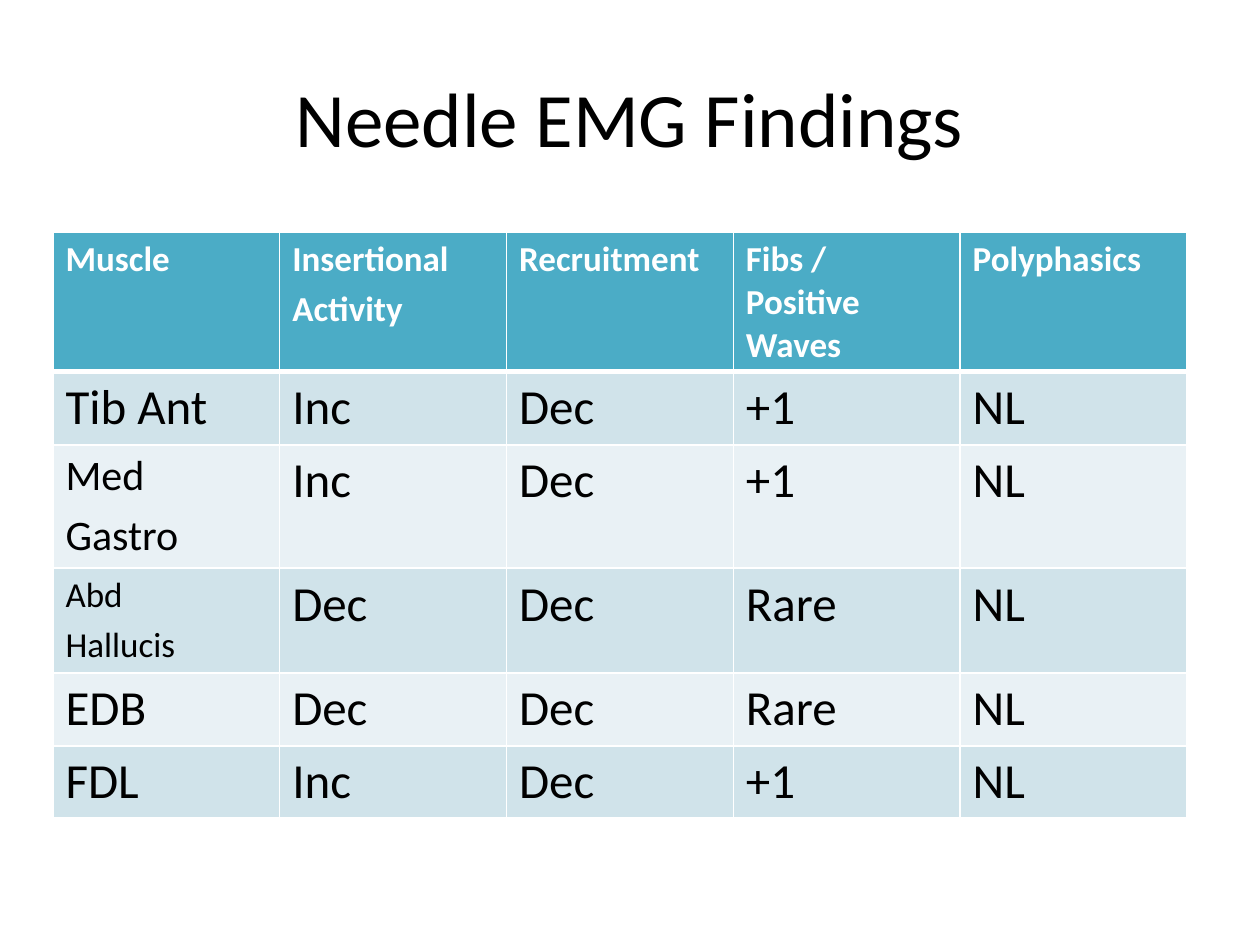
from lxml import etree
from pptx import Presentation
from pptx.dml.color import RGBColor
from pptx.enum.text import MSO_ANCHOR, PP_ALIGN
from pptx.oxml.ns import qn
from pptx.util import Inches, Pt

CENTER, LEFT = PP_ALIGN.CENTER, PP_ALIGN.LEFT
MIDDLE, TOP = MSO_ANCHOR.MIDDLE, MSO_ANCHOR.TOP
FONT = "Calibri"
COLORS = {
    "text": "000000",
    "header_text": "FFFFFF",
    "header": "4BACC6",
    "odd_row": "D0E3EA",
    "even_row": "E9F1F5",
    "border": "FFFFFF",
}

HEADERS = ["Muscle", "Insertional\nActivity", "Recruitment",
           "Fibs / Positive Waves", "Polyphasics"]
FINDINGS = [
    ["Tib Ant", "Inc", "Dec", "+1", "NL"],
    ["Med\nGastro", "Inc", "Dec", "+1", "NL"],
    ["Abd\nHallucis", "Dec", "Dec", "Rare", "NL"],
    ["EDB", "Dec", "Dec", "Rare", "NL"],
    ["FDL", "Inc", "Dec", "+1", "NL"],
]
ROW_HEIGHTS = [1.11, 0.58, 0.98, 0.83, 0.58, 0.57]
BODY_SIZE = 28
SMALLER_SIZES = {"Med\nGastro": 24, "Abd\nHallucis": 20}


def write_text(frame, text, size, color="text", bold=False, align=LEFT):
    """Write one paragraph per line, spaced by a fifth of the text size."""
    frame.word_wrap = True
    for index, line in enumerate(text.split("\n")):
        paragraph = frame.add_paragraph() if index else frame.paragraphs[0]
        paragraph.text = line
        paragraph.alignment = align
        paragraph.space_before = Pt(size * 0.2 if index else 0)
        font = paragraph.font
        font.name, font.size, font.bold = FONT, Pt(size), bold
        font.color.rgb = RGBColor.from_string(COLORS[color])


def set_borders(cell, **widths):
    """Draw the cell's edges, given as tag=points, ahead of its fill."""
    properties = cell._tc.get_or_add_tcPr()
    for index, (tag, width) in enumerate(widths.items()):
        line = etree.Element(qn(f"a:{tag}"), w=str(Pt(width)))
        fill = etree.SubElement(line, qn("a:solidFill"))
        etree.SubElement(fill, qn("a:srgbClr"), val=COLORS["border"])
        properties.insert(index, line)


def add_title(slide, text, left, top, width, height):
    box = slide.shapes.add_textbox(Inches(left), Inches(top), Inches(width), Inches(height))
    write_text(box.text_frame, text, size=44, align=CENTER)
    box.text_frame.vertical_anchor = MIDDLE


def add_findings_table(slide, left, top, width):
    rows = [HEADERS] + FINDINGS
    frame = slide.shapes.add_table(len(rows), len(HEADERS), Inches(left), Inches(top),
                                   Inches(width), Inches(sum(ROW_HEIGHTS)))
    table = frame.table
    for column in table.columns:
        column.width = Inches(width / len(HEADERS))
    for row_index, values in enumerate(rows):
        table.rows[row_index].height = Inches(ROW_HEIGHTS[row_index])
        is_header = row_index == 0
        row_fill = "header" if is_header else "odd_row" if row_index % 2 else "even_row"
        for cell, text in zip(table.rows[row_index].cells, values):
            cell.vertical_anchor = TOP
            cell.fill.solid()
            cell.fill.fore_color.rgb = RGBColor.from_string(COLORS[row_fill])
            # A thicker rule separates the header from the findings
            set_borders(cell, lnL=1, lnR=1, lnT=3 if row_index == 1 else 1,
                        lnB=3 if is_header else 1)
            if is_header:
                write_text(cell.text_frame, text, size=20, color="header_text", bold=True)
            else:
                write_text(cell.text_frame, text, size=SMALLER_SIZES.get(text, BODY_SIZE))


def main():
    presentation = Presentation()
    presentation.slide_width, presentation.slide_height = Inches(10), Inches(7.5)
    slide = presentation.slides.add_slide(presentation.slide_layouts[6])
    add_title(slide, "Needle EMG Findings", 0.5, 0.3, 9, 1.25)
    add_findings_table(slide, 0.42, 1.84, 9)
    presentation.save("out.pptx")


if __name__ == "__main__":
    main()
